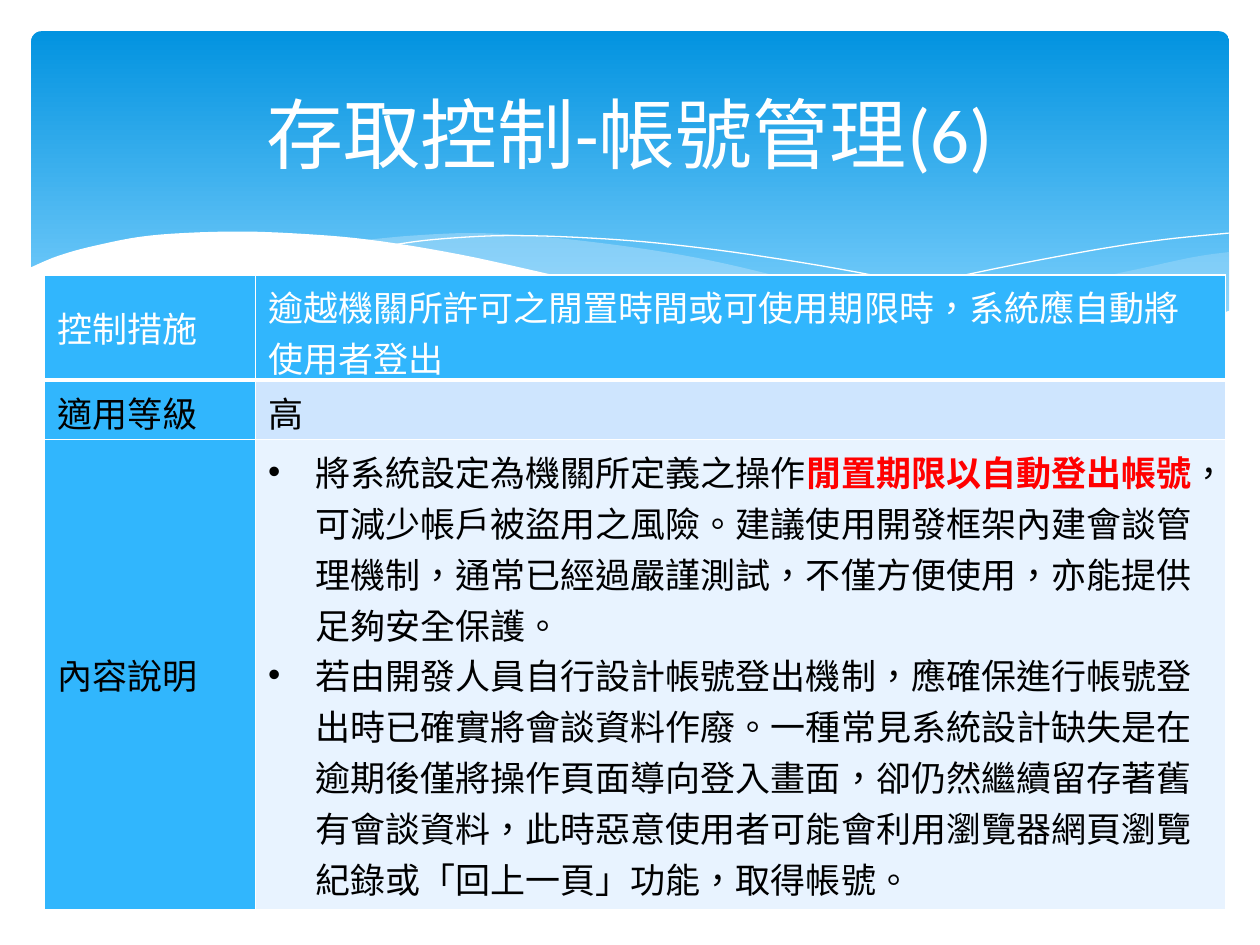
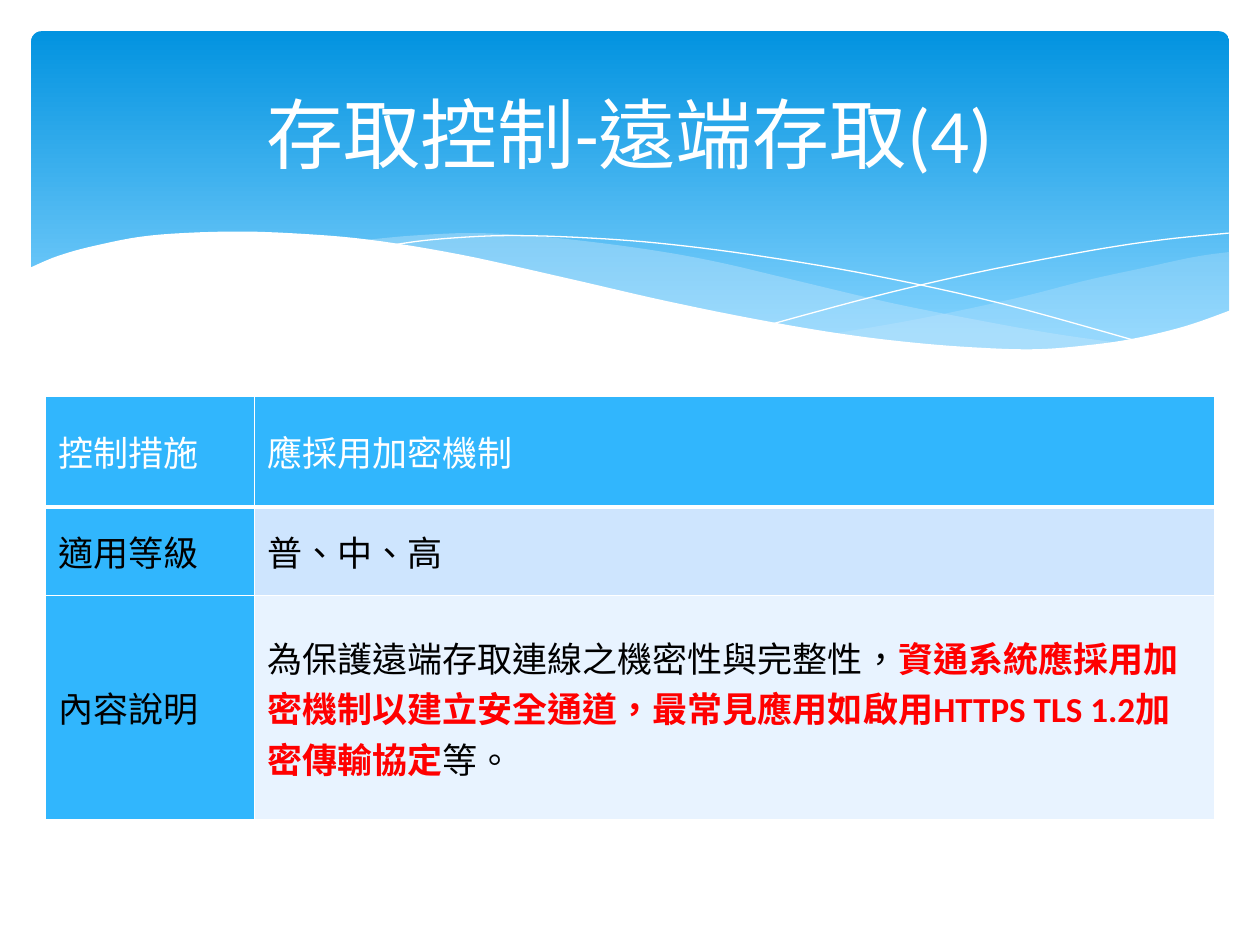
from lxml import etree
from pptx import Presentation
from pptx.dml.color import RGBColor
from pptx.enum.lang import MSO_LANGUAGE_ID
from pptx.enum.shapes import MSO_SHAPE
from pptx.enum.text import MSO_ANCHOR, PP_ALIGN
from pptx.oxml.ns import qn
from pptx.util import Cm, Pt

ROUND_RECT = MSO_SHAPE.ROUNDED_RECTANGLE
MIDDLE = MSO_ANCHOR.MIDDLE
LEFT, CENTER = PP_ALIGN.LEFT, PP_ALIGN.CENTER
CHINESE = MSO_LANGUAGE_ID.TRADITIONAL_CHINESE

FONT = "Calibri"
COLORS = {
    "white": "FFFFFF", "black": "000000", "red": "FF0000",
    "band_top": "0293E0", "band_bottom": "83D3FE", "wave": "C6E7FC",
    "header": "31B6FD", "level": "CEE5FE", "detail": "E8F3FF",
}
ROW_LABELS = ["控制措施", "適用等級", "內容說明"]

# Wave knots in centimetres
RIGHT_TOP = [(16.79, 6.73), (18.52, 6.43), (20.45, 6.02), (21.87, 5.66),
             (23.01, 5.41), (24.08, 5.18), (24.79, 5.08)]
RIGHT_BOTTOM = [(24.79, 6.27), (23.75, 6.65), (22.78, 6.86), (21.69, 7.01),
                (20.4, 7.06), (18.92, 6.99), (17.91, 6.88), (16.79, 6.73)]
MIDDLE_TOP = [(7.26, 4.85), (8.33, 4.75), (9.65, 4.7), (11.23, 4.8),
              (13.06, 5.03), (14.45, 5.28), (15.98, 5.64), (17.93, 6.1),
              (19.69, 6.45), (21.26, 6.73), (22.68, 6.93)]
MIDDLE_BOTTOM = [(22.68, 6.93), (21.54, 7.04), (20.22, 7.06), (18.69, 6.99),
                 (16.89, 6.76), (14.83, 6.4), (12.47, 5.89), (10.85, 5.49),
                 (9.19, 5.16), (7.26, 4.85)]
FALLING_LINE = [(7.85, 4.95), (8.74, 4.83), (10.19, 4.75), (11.91, 4.8),
                (13.54, 4.93), (15.44, 5.18), (17.65, 5.56), (20.19, 6.12),
                (23.04, 6.91)]
RISING_LINE = [(15.57, 6.53), (17.65, 5.97), (19.71, 5.49), (22, 5.05),
               (23.47, 4.83), (24.77, 4.7)]
WHITE_TOP = [(0.58, 5.41), (1.17, 5.16), (1.93, 4.95), (3.02, 4.75),
             (4.5, 4.67), (5.84, 4.7), (7.42, 4.83), (9.27, 5.13),
             (11.35, 5.59), (13.44, 6.07), (15.32, 6.45), (16.97, 6.73),
             (18.44, 6.91), (19.76, 7.01), (20.9, 7.04), (21.92, 6.96),
             (22.83, 6.83), (23.88, 6.58), (24.82, 6.25)]
WHITE_BOTTOM = [(24.82, 8.36), (0.58, 8.36)]


def rgb(name):
    return RGBColor.from_string(COLORS[name])


def smooth(knots, steps=6):
    """Return points on a Catmull-Rom curve through the knots."""
    padded = [knots[0], *knots, knots[-1]]
    points = [knots[0]]
    for a, b, c, d in zip(padded, padded[1:], padded[2:], padded[3:]):
        for i in range(1, steps + 1):
            t = i / steps
            points.append(tuple(
                q + t / 2 * (r - p + t * (2 * p - 5 * q + 4 * r - s
                                          + t * (3 * q - p - 3 * r + s)))
                for p, q, r, s in zip(a, b, c, d)))
    return points


def add_outline(slide, points, close):
    start, *rest = [(Cm(x), Cm(y)) for x, y in points]
    builder = slide.shapes.build_freeform(*start)
    builder.add_line_segments(rest, close=close)
    s = builder.convert_to_shape()
    s.shadow.inherit = False
    return s


def add_wave(slide, points, color, alpha=100):
    """Add a filled wave; alpha is its opacity in percent."""
    s = add_outline(slide, points, True)
    s.fill.solid()
    s.fill.fore_color.rgb = rgb(color)
    s.line.fill.background()
    if alpha < 100:
        clr = s.element.spPr.find(qn("a:solidFill"))[0]
        etree.SubElement(clr, qn("a:alpha"), val=str(alpha * 1000))


def add_curve(slide, knots):
    s = add_outline(slide, smooth(knots), False)
    s.fill.background()
    s.line.color.rgb = rgb("white")
    s.line.width = 0


def add_band(slide):
    s = slide.shapes.add_shape(ROUND_RECT, Cm(0.63), Cm(0.63), Cm(24.15), Cm(6.86))
    s.adjustments[0] = 0.03
    s.shadow.inherit = False
    s.line.fill.background()
    s.fill.gradient()
    s.fill.gradient_angle = 270
    stops = zip(s.fill.gradient_stops, ("band_top", "band_bottom"), (0, 0.9))
    for stop, color, position in stops:
        stop.color.rgb = rgb(color)
        stop.position = position
    add_wave(slide, smooth(RIGHT_TOP) + smooth(RIGHT_BOTTOM), "wave", 29)
    add_wave(slide, smooth(MIDDLE_TOP) + smooth(MIDDLE_BOTTOM), "wave", 40)
    add_curve(slide, FALLING_LINE)
    add_curve(slide, RISING_LINE)
    add_wave(slide, smooth(WHITE_TOP) + WHITE_BOTTOM, "white")


def add_bullet(p):
    pPr = p._p.get_or_add_pPr()
    pPr.set("marL", str(Cm(0.95)))
    pPr.set("indent", str(-Cm(0.95)))
    etree.SubElement(pPr, qn("a:buFont"), typeface="Arial")
    etree.SubElement(pPr, qn("a:buChar"), char="•")


def write(tf, paragraphs, size=20, color="black", align=LEFT, bullet=False):
    """Write paragraphs; in each, every second part is bold red."""
    for i, parts in enumerate(paragraphs):
        p = tf.add_paragraph() if i else tf.paragraphs[0]
        p.alignment = align
        if bullet:
            add_bullet(p)
        for j, text in enumerate(parts):
            strong = j % 2 == 1
            r = p.add_run()
            r.text = text
            r.font.name = FONT
            r.font.size = Pt(size)
            r.font.bold = strong
            r.font.color.rgb = rgb("red" if strong else color)
            r.font.language_id = CHINESE


def add_title(slide, text):
    tf = slide.shapes.add_textbox(Cm(1.27), Cm(0.94), Cm(22.86), Cm(3.48)).text_frame
    tf.word_wrap = True
    tf.vertical_anchor = MIDDLE
    write(tf, [[text]], size=44, color="white", align=CENTER)


def set_borders(cell, top, bottom):
    """Draw white borders; top and bottom are widths in points."""
    tcPr = cell._tc.get_or_add_tcPr()
    for side, width in zip("LRTB", (1, 1, top, bottom)):
        ln = etree.SubElement(tcPr, qn(f"a:ln{side}"), w=str(Pt(width)))
        fill = etree.SubElement(ln, qn("a:solidFill"))
        etree.SubElement(fill, qn("a:srgbClr"), val=COLORS["white"])


def add_control_table(slide, left, top, widths, heights, contents, bullet=False):
    """Add the control table; contents holds paragraphs for each row."""
    table = slide.shapes.add_table(
        len(heights), len(widths), Cm(left), Cm(top),
        Cm(sum(widths)), Cm(sum(heights))).table
    table.first_row = table.horz_banding = False
    for column, width in zip(table.columns, widths):
        column.width = Cm(width)
    fills = ["header", "level", "detail"]
    for i, (height, label, content) in enumerate(zip(heights, ROW_LABELS, contents)):
        table.rows[i].height = Cm(height)
        for j, paragraphs in enumerate(([[label]], content)):
            cell = table.cell(i, j)
            set_borders(cell, top=3 if i == 1 else 1, bottom=3 if i == 0 else 1)
            cell.fill.solid()
            cell.fill.fore_color.rgb = rgb(fills[i] if j else "header")
            cell.vertical_anchor = MIDDLE
            write(cell.text_frame, paragraphs, color="black" if i else "white",
                  bullet=bullet and i == 2 and j == 1)


def add_control_slide(prs, title, **table):
    slide = prs.slides.add_slide(prs.slide_layouts[6])
    add_band(slide)
    add_title(slide, title)
    add_control_table(slide, **table)


def main():
    prs = Presentation()
    prs.slide_width, prs.slide_height = Cm(25.4), Cm(19.05)
    add_control_slide(
        prs, "存取控制-帳號管理(6)", left=0.9, top=5.54,
        widths=[4.25, 19.55], heights=[2.12, 1.2, 9.48], bullet=True,
        contents=[
            [["逾越機關所許可之閒置時間或可使用期限時，系統應自動將使用者登出"]],
            [["高"]],
            [["將系統設定為機關所定義之操作", "閒置期限以自動登出帳號",
              "，可減少帳戶被盜用之風險。建議使用開發框架內建會談管理機制，"
              "通常已經過嚴謹測試，不僅方便使用，亦能提供足夠安全保護。"],
             ["若由開發人員自行設計帳號登出機制，應確保進行帳號登出時已確實將"
              "會談資料作廢。一種常見系統設計缺失是在逾期後僅將操作頁面導向登入"
              "畫面，卻仍然繼續留存著舊有會談資料，此時惡意使用者可能會利用"
              "瀏覽器網頁瀏覽紀錄或「回上一頁」功能，取得帳號。"]],
        ])
    add_control_slide(
        prs, "存取控制-遠端存取(4)", left=0.92, top=7.98,
        widths=[4.21, 19.36], heights=[2.24, 1.78, 4.53],
        contents=[
            [["應採用加密機制"]],
            [["普、中、高"]],
            [["為保護遠端存取連線之機密性與完整性，",
              "資通系統應採用加密機制以建立安全通道，"
              "最常見應用如啟用HTTPS TLS 1.2加密傳輸協定", "等。"]],
        ])
    prs.save("out.pptx")


if __name__ == "__main__":
    main()
